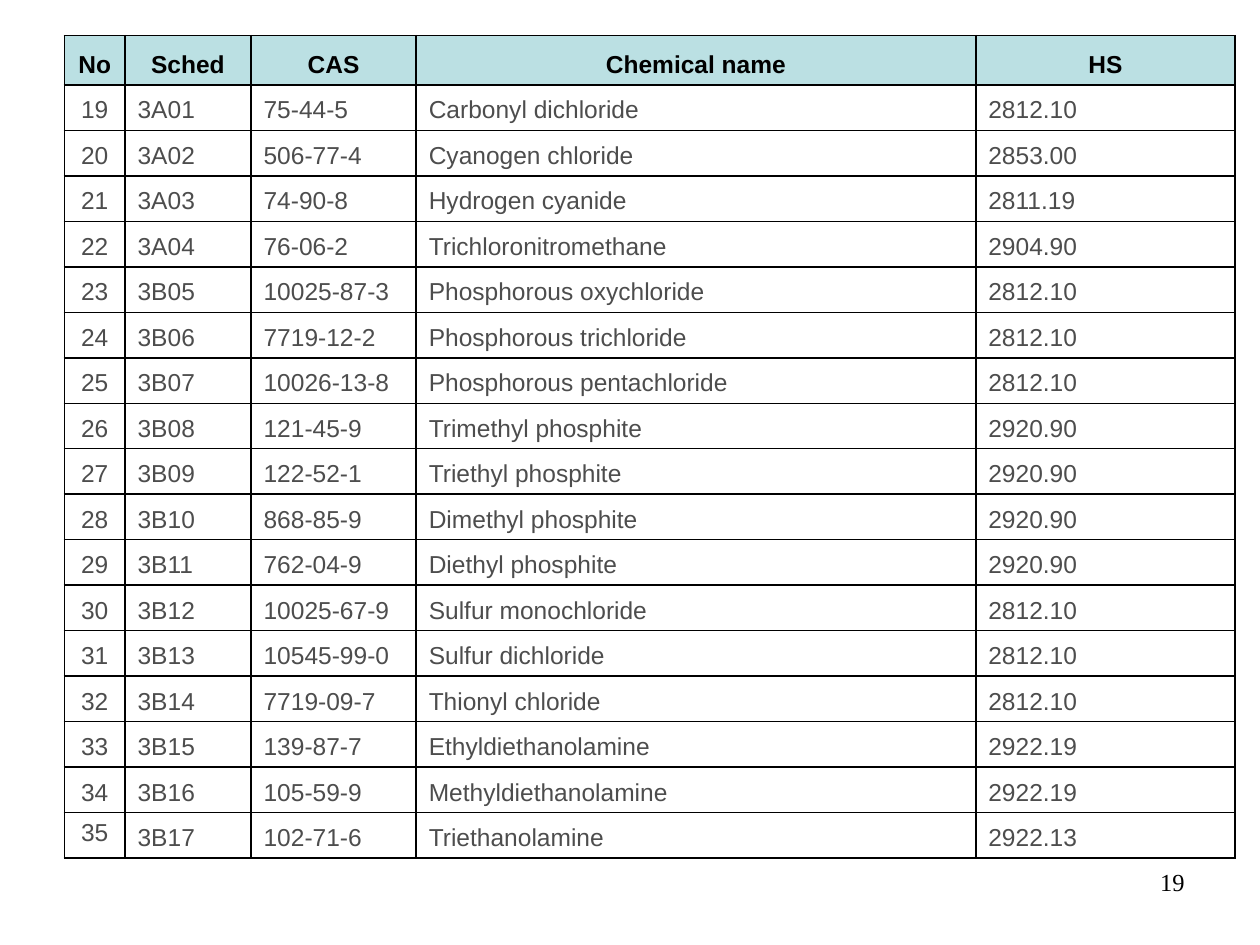
import pptx
import pptx.dml.color
import pptx.enum.text
import pptx.util
from lxml import etree
from pptx.oxml.ns import qn
from pptx.util import Cm

ALIGN = pptx.enum.text.PP_ALIGN
ANCHOR = pptx.enum.text.MSO_ANCHOR

HEADINGS = ["No", "Sched", "CAS", "Chemical name", "HS"]
FIRST_NUMBER = 19
CHEMICALS = [
    ("3A01", "75-44-5", "Carbonyl dichloride", "2812.10"),
    ("3A02", "506-77-4", "Cyanogen chloride", "2853.00"),
    ("3A03", "74-90-8", "Hydrogen cyanide", "2811.19"),
    ("3A04", "76-06-2", "Trichloronitromethane", "2904.90"),
    ("3B05", "10025-87-3", "Phosphorous oxychloride", "2812.10"),
    ("3B06", "7719-12-2", "Phosphorous trichloride", "2812.10"),
    ("3B07", "10026-13-8", "Phosphorous pentachloride", "2812.10"),
    ("3B08", "121-45-9", "Trimethyl phosphite", "2920.90"),
    ("3B09", "122-52-1", "Triethyl phosphite", "2920.90"),
    ("3B10", "868-85-9", "Dimethyl phosphite", "2920.90"),
    ("3B11", "762-04-9", "Diethyl phosphite", "2920.90"),
    ("3B12", "10025-67-9", "Sulfur monochloride", "2812.10"),
    ("3B13", "10545-99-0", "Sulfur dichloride", "2812.10"),
    ("3B14", "7719-09-7", "Thionyl chloride", "2812.10"),
    ("3B15", "139-87-7", "Ethyldiethanolamine", "2922.19"),
    ("3B16", "105-59-9", "Methyldiethanolamine", "2922.19"),
    ("3B17", "102-71-6", "Triethanolamine", "2922.13"),
]
COLUMN_WIDTHS = [1.22, 2.54, 3.33, 11.28, 5.23]
HEADER_HEIGHT = 0.99


def rgb(hex_colour):
    return pptx.dml.color.RGBColor.from_string(hex_colour)


def write(frame, text, font="Arial", size=14, colour="000000", bold=False,
          align=ALIGN.LEFT, hanging=0):
    paragraph = frame.paragraphs[0]
    paragraph.alignment = align
    if hanging:
        properties = paragraph._p.get_or_add_pPr()
        properties.set("marL", str(Cm(hanging)))
        properties.set("indent", str(-Cm(hanging)))
    run = paragraph.add_run()
    run.text = text
    run.font.name = font
    run.font.size = pptx.util.Pt(size)
    run.font.bold = bold
    run.font.color.rgb = rgb(colour)


def add_borders(cell, colour="000000", width=1):
    properties = cell._tc.get_or_add_tcPr()
    for side in ("a:lnL", "a:lnR", "a:lnT", "a:lnB"):
        line = etree.SubElement(properties, qn(side), w=str(pptx.util.Pt(width)))
        fill = etree.SubElement(line, qn("a:solidFill"))
        etree.SubElement(fill, qn("a:srgbClr"), val=colour)


def add_page_number(slide, left, top, width, height):
    box = slide.shapes.add_textbox(Cm(left), Cm(top), Cm(width), Cm(height))
    box.text_frame.word_wrap = True
    write(box.text_frame, "19", font="Times New Roman", align=ALIGN.RIGHT)


def add_chemicals_table(slide, left, top, width, height):
    rows = [HEADINGS] + [(str(number), *chemical)
                         for number, chemical in enumerate(CHEMICALS, FIRST_NUMBER)]
    table = slide.shapes.add_table(len(rows), len(HEADINGS), Cm(left), Cm(top),
                                   Cm(width), Cm(height)).table
    table.horz_banding = False

    # Column widths scale to the box; body rows share the height below the header
    for column, share in zip(table.columns, COLUMN_WIDTHS):
        column.width = Cm(width * share / sum(COLUMN_WIDTHS))
    body_height = (height - HEADER_HEIGHT) / len(CHEMICALS)
    for index, row in enumerate(table.rows):
        row.height = Cm(body_height if index else HEADER_HEIGHT)

    for r, values in enumerate(rows):
        header = r == 0
        for c, value in enumerate(values):
            cell = table.cell(r, c)
            cell.vertical_anchor = ANCHOR.BOTTOM
            add_borders(cell)
            if header:
                cell.fill.solid()
                cell.fill.fore_color.rgb = rgb("BBE0E3")
            else:
                cell.fill.background()
            write(cell.text_frame, value, bold=header, hanging=0.95,
                  colour="000000" if header else "4D4D4D",
                  align=ALIGN.CENTER if header or c == 0 else ALIGN.LEFT)

    # The last number sits at the top of its cell
    table.cell(len(rows) - 1, 0).vertical_anchor = ANCHOR.TOP


def main():
    deck = pptx.Presentation()
    deck.slide_width, deck.slide_height = Cm(25.4), Cm(19.05)
    slide = deck.slides.add_slide(deck.slide_layouts[6])
    add_page_number(slide, 18.2, 17.35, 5.93, 1.32)
    add_chemicals_table(slide, 1.3, 0.72, 23.6, 16.59)
    deck.save("out.pptx")


if __name__ == "__main__":
    main()
